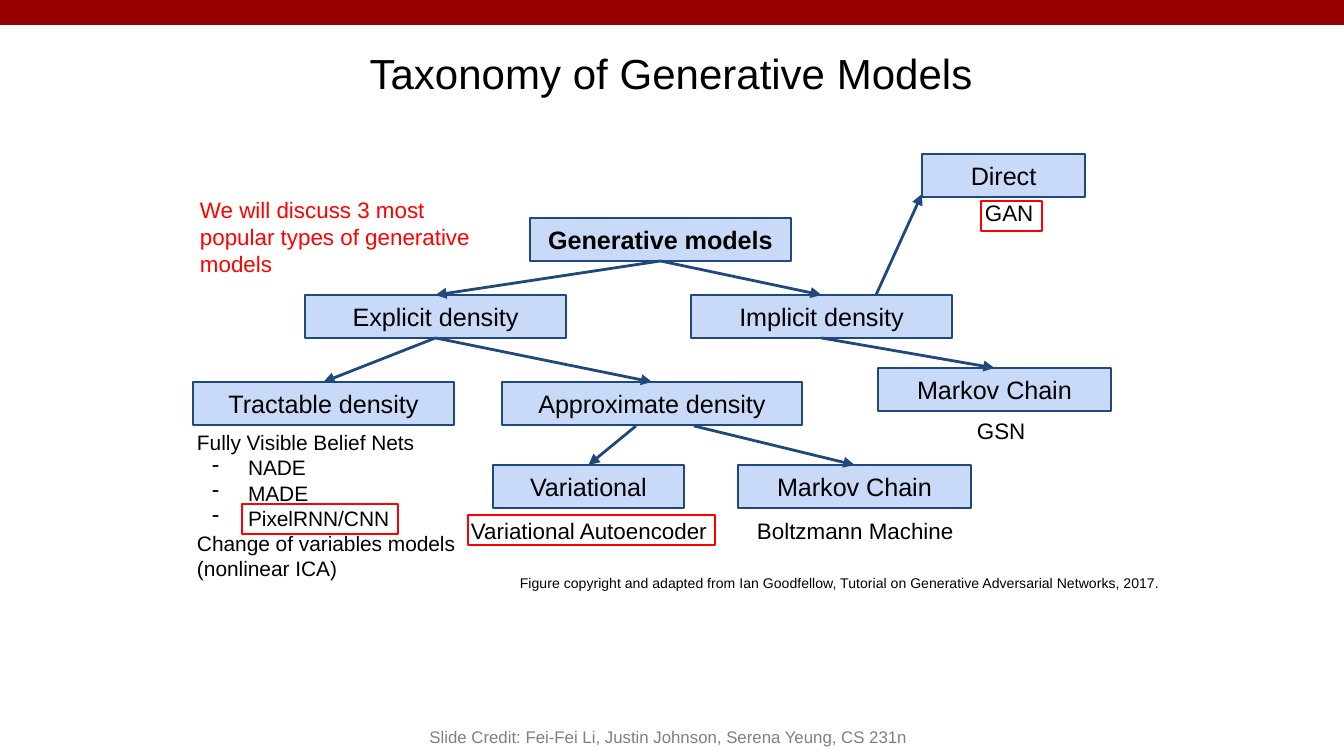
from lxml import etree
from pptx import Presentation
from pptx.dml.color import RGBColor
from pptx.enum.shapes import MSO_CONNECTOR, MSO_SHAPE
from pptx.enum.text import MSO_ANCHOR, PP_ALIGN
from pptx.oxml.ns import qn
from pptx.util import Emu, Pt

RECT, LINE = MSO_SHAPE.RECTANGLE, MSO_CONNECTOR.STRAIGHT
LEFT, MID = PP_ALIGN.LEFT, PP_ALIGN.CENTER
TOP, CENTER, BASE = MSO_ANCHOR.TOP, MSO_ANCHOR.MIDDLE, MSO_ANCHOR.BOTTOM
SCALE = 914400 / 134.4
WIDE, HIGH = 1344, 756
BLACK, RED, NAVY, PALE, MAROON, GREY = (
    "000000", "FF0000", "1F497D", "C9DAF8", "990000", "808080")
NODE_H, PAD = 43, 9

# key: text, left, top, width
NODES = {
    "root": ("Generative models", 530, 218, 261),
    "explicit": ("Explicit density", 305, 295, 261),
    "implicit": ("Implicit density", 691, 295, 261),
    "direct": ("Direct", 922, 154, 163),
    "tractable": ("Tractable density", 193, 382, 261),
    "approx": ("Approximate density", 502, 382, 300),
    "chain": ("Markov Chain", 878, 368, 233),
    "variational": ("Variational", 493, 465, 191),
    "boltzmann": ("Markov Chain", 738, 465, 233),
}
# each end is a node, or a free point
LINKS = [
    ("explicit", "tractable"),
    ("explicit", "approx"),
    ("root", "explicit"),
    ("root", "implicit"),
    ("implicit", "chain"),
    ((876, 295), (922, 194)),
    ((694, 426), "boltzmann"),
    ((636, 426), "variational"),
]
# text, box, size, colour, align, anchor
TEXTS = [
    ("Taxonomy of Generative Models", (218, 26, 907, 94), 22.5, BLACK, MID, CENTER),
    ("Variational Autoencoder", (462, 508, 323, 54), 12, BLACK, LEFT, TOP),
    ("Boltzmann Machine", (748, 508, 228, 54), 12, BLACK, LEFT, TOP),
    ("GSN", (968, 408, 71, 54), 12, BLACK, LEFT, TOP),
    ("GAN", (976, 190, 71, 54), 12, BLACK, LEFT, TOP),
    ("Figure copyright and adapted from Ian Goodfellow, Tutorial on Generative "
     "Adversarial Networks, 2017.", (511, 566, 663, 54), 7.5, BLACK, LEFT, TOP),
    ("We will discuss 3 most popular types of generative models",
     (191, 187, 311, 47), 12, RED, LEFT, TOP),
    ("Slide Credit: Fei-Fei Li, Justin Johnson, Serena Yeung, CS 231n",
     (370, 706, 596, 50), 9, GREY, MID, BASE),
]
# text, has dash
METHODS = [
    ("Fully Visible Belief Nets", False),
    ("NADE", True),
    ("MADE", True),
    ("PixelRNN/CNN", True),
    ("Change of variables models (nonlinear ICA)", False),
]
FRAMES = [(242, 504, 156, 30), (468, 515, 247, 30), (981, 201, 61, 30)]


def px(n):
    return Emu(round(n * SCALE))


def color(code):
    return RGBColor.from_string(code)


def assign(target, values):
    for name, value in values.items():
        setattr(target, name, value)


def write(shape, lines, size, code=BLACK, align=LEFT, anchor=TOP, bold=False):
    """Fill a shape with (text, has dash) paragraphs."""
    frame = shape.text_frame
    assign(frame, {"word_wrap": True, "vertical_anchor": anchor,
                   **{f"margin_{side}": px(PAD)
                      for side in ("left", "right", "top", "bottom")}})
    for i, (text, dash) in enumerate(lines):
        para = frame.add_paragraph() if i else frame.paragraphs[0]
        para.alignment = align
        if dash:
            props = para._p.get_or_add_pPr()
            props.set("marL", str(px(51)))
            props.set("indent", str(px(-36)))
            etree.SubElement(props, qn("a:buChar"), char="-")
        run = para.add_run()
        run.text = text
        assign(run.font, {"name": "Arial", "size": Pt(size), "bold": bold})
        run.font.color.rgb = color(code)


def add_rect(box, fill=None, edge=None, width=0.75):
    shape = slide.shapes.add_shape(RECT, *map(px, box))
    shape.shadow.inherit = False
    if fill:
        shape.fill.solid()
        shape.fill.fore_color.rgb = color(fill)
    else:
        shape.fill.background()
    if edge:
        shape.line.color.rgb = color(edge)
        shape.line.width = Pt(width)
    else:
        shape.line.fill.background()
    return shape


def add_text(box, lines, *style):
    write(slide.shapes.add_textbox(*map(px, box)), lines, *style)


def find(end, drop):
    """Point for a link end: a free point, or mid-side of a node."""
    if end in NODES:
        _, x, y, w = NODES[end]
        return x + w / 2, y + drop
    return end


def add_link(start, stop):
    points = *find(start, NODE_H), *find(stop, 0)
    link = slide.shapes.add_connector(LINE, *map(px, points))
    if start in nodes:
        link.begin_connect(nodes[start], 2)
    if stop in nodes:
        link.end_connect(nodes[stop], 0)
    link.line.color.rgb = color(NAVY)
    link.line.width = Pt(1.5)
    etree.SubElement(link.line._get_or_add_ln(), qn("a:tailEnd"), type="triangle")
    etree.SubElement(link._element.spPr, qn("a:effectLst"))


deck = Presentation()
deck.slide_width, deck.slide_height = px(WIDE), px(HIGH)
slide = deck.slides.add_slide(deck.slide_layouts[6])

add_rect((0, 0, WIDE, 25), MAROON)
add_text((188, 421, 306, 54), METHODS, 11.2)
nodes = {}
for key, (label, x, y, w) in NODES.items():
    nodes[key] = add_rect((x, y, w, NODE_H), PALE, NAVY)
    write(nodes[key], [(label, False)], 13.5, BLACK, MID, CENTER, key == "root")
for text, box, *style in TEXTS:
    add_text(box, [(text, False)], *style)
for start, stop in LINKS:
    add_link(start, stop)
for box in FRAMES:
    add_rect(box, edge=RED, width=1.5)

deck.save("out.pptx")
